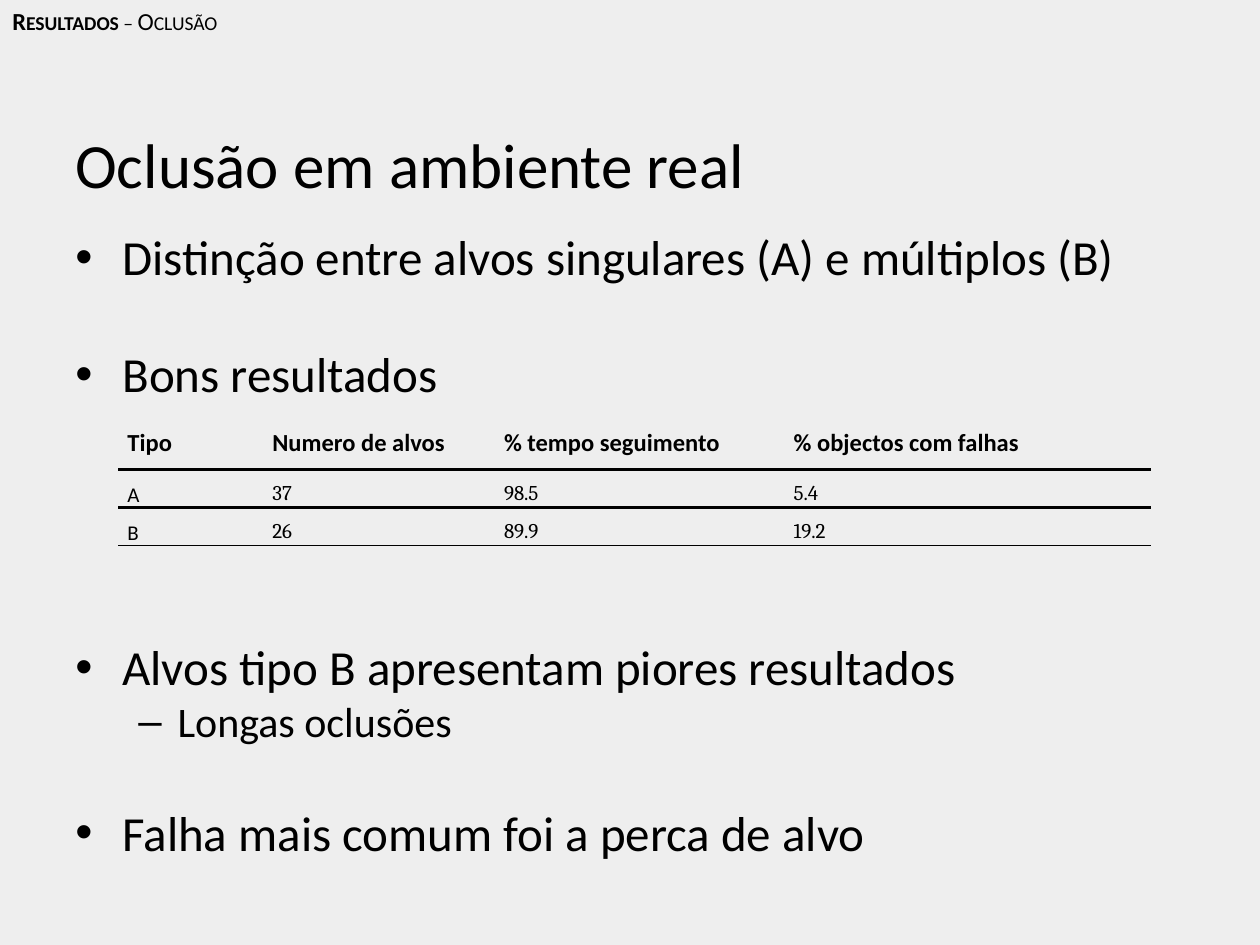
from dataclasses import dataclass

from lxml import etree
from pptx import Presentation
from pptx.dml.color import RGBColor
from pptx.enum.text import MSO_ANCHOR, PP_ALIGN
from pptx.oxml.ns import qn
from pptx.util import Cm, Pt

BOTTOM = MSO_ANCHOR.BOTTOM
TOP = MSO_ANCHOR.TOP
JUSTIFY = PP_ALIGN.JUSTIFY
BLANK_LAYOUT = 6
PLAIN_TABLE_STYLE = "{2D5ABB26-0587-4C30-8999-92F81FD0307C}"


@dataclass(frozen=True)
class Theme:
    background: str = "EEEEEE"
    ink: str = "000000"
    font: str = "Calibri"
    number_font: str = "Cambria"
    title: int = 36
    bullet: int = 28
    sub_bullet: int = 24
    label: int = 14
    cell: int = 12
    thick_rule: float = 2.25
    thin_rule: float = 1


class SlideBuilder:
    def __init__(self, slide, theme):
        self.slide = slide
        self.theme = theme
        fill = slide.background.fill
        fill.solid()
        fill.fore_color.rgb = RGBColor.from_string(theme.background)

    def style(self, font, size, bold=False, name=None):
        font.name = name or self.theme.font
        font.size = Pt(size)
        font.bold = bold
        font.color.rgb = RGBColor.from_string(self.theme.ink)

    def text_frame(self, left, top, width, height, anchor=TOP):
        shape = self.slide.shapes.add_textbox(Cm(left), Cm(top), Cm(width), Cm(height))
        frame = shape.text_frame
        frame.word_wrap = True
        frame.vertical_anchor = anchor
        return frame

    def section_label(self, box, section, topic):
        paragraph = self.text_frame(*box).paragraphs[0]
        for text, bold in ((section, True), (topic, False)):
            run = paragraph.add_run()
            run.text = text
            self.style(run.font, self.theme.label, bold)
            run.font._element.set("cap", "small")

    def title(self, box, text):
        paragraph = self.text_frame(*box, anchor=BOTTOM).paragraphs[0]
        paragraph.text = text
        self.style(paragraph.font, self.theme.title)

    def bullets(self, box, items):
        frame = self.text_frame(*box)
        # Per level: marker, text indent, hanging indent, type size
        levels = (("•", 0.95, 0.95, self.theme.bullet),
                  ("–", 2.06, 0.79, self.theme.sub_bullet))
        for index, (text, level, gap) in enumerate(items):
            paragraph = frame.add_paragraph() if index else frame.paragraphs[0]
            paragraph.text = text
            paragraph.level = level
            marker, indent, hanging, size = levels[level]
            properties = paragraph._p.get_or_add_pPr()
            properties.set("marL", str(Cm(indent)))
            properties.set("indent", str(-Cm(hanging)))
            if gap:
                paragraph.space_before = Pt(gap)
            etree.SubElement(properties, qn("a:buFont"), typeface="Arial")
            etree.SubElement(properties, qn("a:buChar"), char=marker)
            self.style(paragraph.font, size)

    def cell_rule(self, cell, side, width):
        line = etree.Element(qn(f"a:ln{side}"), w=str(Pt(width)))
        fill = etree.SubElement(line, qn("a:solidFill"))
        etree.SubElement(fill, qn("a:srgbClr"), val=self.theme.ink)
        cell._tc.get_or_add_tcPr().insert(0, line)

    def table(self, left, top, column_widths, row_heights, rows):
        theme = self.theme
        graphic_frame = self.slide.shapes.add_table(
            len(rows), len(column_widths), Cm(left), Cm(top),
            Cm(sum(column_widths)), Cm(sum(row_heights)))
        table = graphic_frame.table
        table.horz_banding = False
        table.first_row = False
        table._tbl.tblPr.find(qn("a:tableStyleId")).text = PLAIN_TABLE_STYLE
        for column, width in zip(table.columns, column_widths):
            column.width = Cm(width)
        # Rule below the header and below the last row
        rules = {0: ("B", theme.thick_rule), 1: ("T", theme.thick_rule),
                 len(rows) - 1: ("B", theme.thin_rule)}
        for row_index, values in enumerate(rows):
            table.rows[row_index].height = Cm(row_heights[row_index])
            header = row_index == 0
            for column_index, value in enumerate(values):
                cell = table.cell(row_index, column_index)
                cell.fill.background()
                cell.margin_left = cell.margin_right = Cm(0.19)
                cell.margin_top = cell.margin_bottom = 0
                paragraph = cell.text_frame.paragraphs[0]
                paragraph.text = value
                paragraph.alignment = JUSTIFY
                paragraph.line_spacing = 1.5
                numeric = not header and column_index > 0
                self.style(paragraph.font, theme.label if header else theme.cell,
                           header, theme.number_font if numeric else theme.font)
                if row_index in rules:
                    self.cell_rule(cell, *rules[row_index])


def main():
    presentation = Presentation()
    presentation.slide_width = Cm(25.4)
    presentation.slide_height = Cm(19.05)
    slide = presentation.slides.add_slide(presentation.slide_layouts[BLANK_LAYOUT])
    builder = SlideBuilder(slide, Theme())

    # Main points: text, level, space before in points
    builder.bullets((1.27, 4.45, 22.86, 12.57), (
        ("Distinção entre alvos singulares (A) e múltiplos (B)", 0, 0),
        ("Bons resultados", 0, 33.2),
        ("Alvos tipo B apresentam piores resultados", 0, 133.8),
        ("Longas oclusões", 1, 0),
        ("Falha mais comum foi a perca de alvo", 0, 32),
    ))

    # Headings
    builder.title((1.27, 0.99, 22.86, 3.18), "Oclusão em ambiente real")
    builder.section_label((0, 0, 11.7, 0.86), "Resultados ", "– Oclusão")

    # Results by target type
    builder.table(2.38, 8.33, (2.92, 4.67, 5.84, 7.4), (1.14, 0.76, 0.76), (
        ("Tipo", "Numero de alvos", "% tempo seguimento", "% objectos com falhas"),
        ("A", "37", "98.5", "5.4"),
        ("B", "26", "89.9", "19.2"),
    ))

    presentation.save("out.pptx")


if __name__ == "__main__":
    main()
